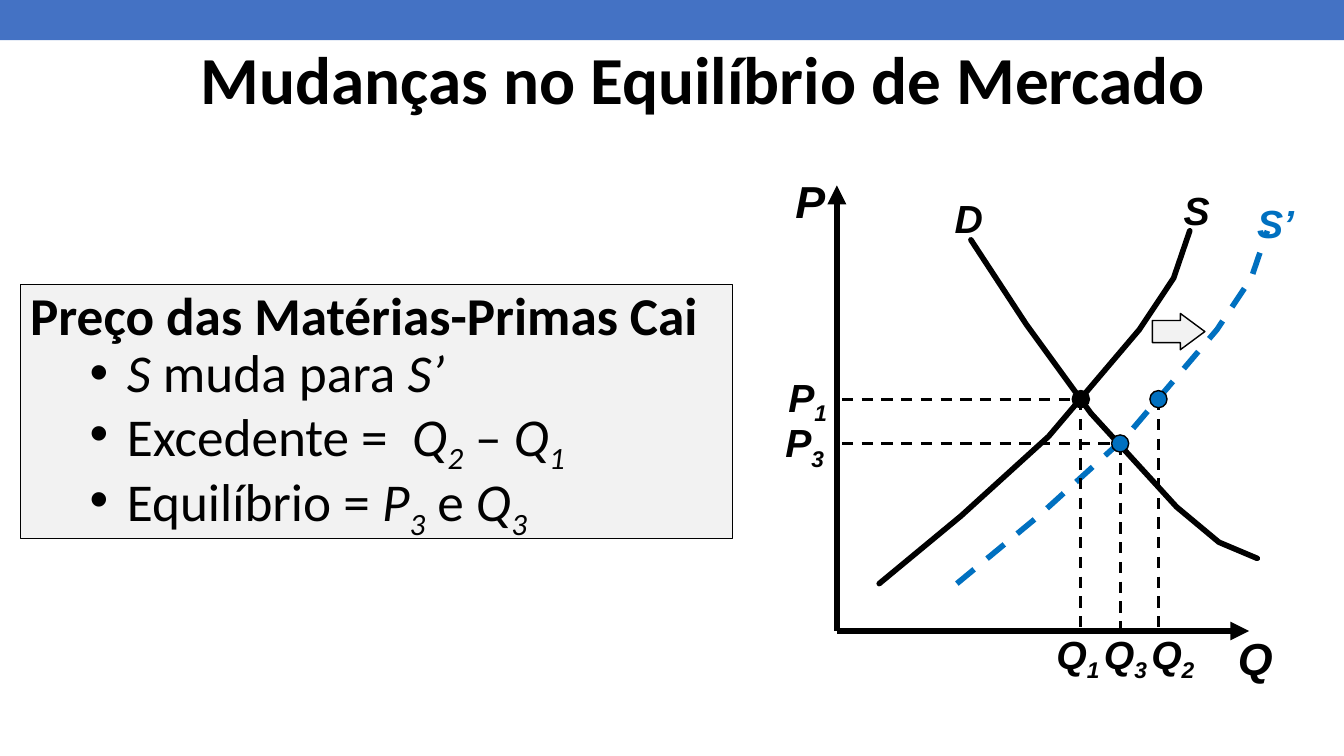
import pptx
import pptx.dml.color
import pptx.enum.dml
import pptx.enum.shapes
import pptx.enum.text
import pptx.oxml.ns
import pptx.util
import lxml.etree

Inches = pptx.util.Inches
Pt = pptx.util.Pt
qn = pptx.oxml.ns.qn
SHAPES = pptx.enum.shapes.MSO_SHAPE
BLACK, BLUE, GREY = "000000", "0070C0", "F2F2F2"


def color(hex_string):
    return pptx.dml.color.RGBColor.from_string(hex_string)


def style_line(line, hex_string, width, dashed=False):
    line.color.rgb = color(hex_string)
    line.width = Pt(width)
    if dashed:
        line.dash_style = pptx.enum.dml.MSO_LINE.DASH


def add_filled(slide, kind, box, fill, outline=None):
    filled = slide.shapes.add_shape(kind, *map(Inches, box))
    filled.shadow.inherit = False
    filled.fill.solid()
    filled.fill.fore_color.rgb = color(fill)
    if outline:
        style_line(filled.line, outline, 1)
    else:
        filled.line.fill.background()
    return filled


def add_line(slide, start, end, width, dashed=False, arrow=False):
    connector = slide.shapes.add_connector(
        pptx.enum.shapes.MSO_CONNECTOR.STRAIGHT, *map(Inches, start + end))
    style_line(connector.line, BLACK, width, dashed)
    properties = connector._element.spPr
    if arrow:
        lxml.etree.SubElement(properties.find(qn("a:ln")), qn("a:tailEnd"), type="triangle")
    lxml.etree.SubElement(properties, qn("a:effectLst"))


def add_curve(slide, points, hex_string, dashed=False):
    corners = [(Inches(x), Inches(y)) for x, y in points]
    builder = slide.shapes.build_freeform(*corners[0])
    builder.add_line_segments(corners[1:], close=False)
    curve = builder.convert_to_shape()
    curve.shadow.inherit = False
    curve.fill.background()
    style_line(curve.line, hex_string, 4, dashed)
    if not dashed:
        curve._element.spPr.find(qn("a:ln")).set("cap", "rnd")


def add_run(paragraph, text, font, size, bold=False, italic=False, subscript=False, hex_string=BLACK):
    run = paragraph.add_run()
    run.text = text
    run.font.name = font
    run.font.size = Pt(size)
    run.font.bold = bold
    run.font.italic = italic
    run.font.color.rgb = color(hex_string)
    if subscript:
        run._r.get_or_add_rPr().set("baseline", "-25000")


def add_label(slide, box, letter, subscript="", size=28, hex_string=BLACK):
    label = slide.shapes.add_textbox(*map(Inches, box))
    label.text_frame.word_wrap = False
    paragraph = label.text_frame.paragraphs[0]
    add_run(paragraph, letter, "Arial", size, True, True, hex_string=hex_string)
    if subscript:
        add_run(paragraph, subscript, "Arial", size, True, True, True, hex_string)


def add_header(slide, left, top, width):
    add_filled(slide, SHAPES.RECTANGLE, (left, top, width, 0.4), "4472C4")
    title = slide.shapes.add_textbox(*map(Inches, (left + 1.4, top + 0.44, 10.66, 0.79)))
    frame = title.text_frame
    frame.word_wrap = True
    frame.vertical_anchor = pptx.enum.text.MSO_ANCHOR.BOTTOM
    paragraph = frame.paragraphs[0]
    paragraph.alignment = pptx.enum.text.PP_ALIGN.RIGHT
    paragraph.line_spacing = 0.9
    add_run(paragraph, "Mudanças no Equilíbrio de Mercado", "Calibri", 48, bold=True)


def add_summary(slide, left, top, width, height):
    summary = slide.shapes.add_textbox(*map(Inches, (left, top, width, height)))
    summary.fill.solid()
    summary.fill.fore_color.rgb = color(GREY)
    style_line(summary.line, BLACK, 0.75)
    frame = summary.text_frame
    frame.word_wrap = True
    heading = frame.paragraphs[0]
    heading.line_spacing = 0.9
    add_run(heading, "Preço das Matérias-Primas Cai", "Calibri", 38, bold=True)

    effects = [
        [("S ", "i"), ("muda para ", ""), ("S’", "i")],
        [("Excedente =  ", ""), ("Q", "i"), ("2", "is"), (" – ", ""), ("Q", "i"), ("1", "is")],
        [("Equilíbrio = ", ""), ("P", "i"), ("3", "is"), (" e ", ""), ("Q", "i"), ("3", "is")],
    ]
    for pieces in effects:
        effect = frame.add_paragraph()
        properties = effect._p.get_or_add_pPr()
        properties.set("marL", str(Inches(0.96)))
        properties.set("indent", str(Inches(-0.37)))
        lxml.etree.SubElement(properties, qn("a:buFont"), typeface="Arial")
        lxml.etree.SubElement(properties, qn("a:buChar"), char="•")
        effect.line_spacing = 0.9
        effect.space_before = Pt(0)
        for text, marks in pieces:
            add_run(effect, text, "Calibri", 38, italic="i" in marks, subscript="s" in marks)


def add_market_chart(slide, left, top):
    def at(x, y):
        return left + x, top + y

    axis_x, axis_y = 0.6, 4.56
    supply = [(1.02, 4.09), (1.83, 3.42), (2.7, 2.63), (3.6, 1.57), (3.94, 1.06), (4.1, 0.59)]
    demand = [(1.93, 0.68), (2.48, 1.52), (3.12, 2.4), (3.97, 3.33), (4.39, 3.68), (4.77, 3.84)]
    shift = 0.77

    add_curve(slide, [at(x + shift, y) for x, y in supply], BLUE, dashed=True)
    shift_arrow = add_filled(slide, SHAPES.RIGHT_ARROW, at(3.73, 1.41) + (0.52, 0.36), GREY, BLACK)
    shift_arrow.adjustments[0] = 0.61
    shift_arrow.adjustments[1] = 0.676
    add_line(slide, at(axis_x, axis_y), at(axis_x, 0.14), 4.5, arrow=True)
    add_line(slide, at(axis_x, axis_y), at(4.69, axis_y), 4.5, arrow=True)
    for curve in (supply, demand):
        add_curve(slide, [at(x, y) for x, y in curve], BLACK)

    market_points = [
        (3.02, 2.26, axis_y, BLACK, True),
        (3.41, 2.7, 4.64, BLUE, True),
        (3.79, 2.26, axis_y, BLUE, False),
    ]
    diameter = 0.17
    for x, y, foot, fill, has_price in market_points:
        add_line(slide, at(x, y), at(x, foot), 2, dashed=True)
        if has_price:
            add_line(slide, at(axis_x + 0.05, y), at(x, y), 2, dashed=True)
    for x, y, foot, fill, has_price in market_points:
        corner = at(x - diameter / 2, y - diameter / 2)
        add_filled(slide, SHAPES.OVAL, corner + (diameter, diameter), fill, BLACK)

    add_label(slide, at(0.09, -0.03) + (0.5, 0.64), "P", size=32)
    add_label(slide, at(4.48, 4.51) + (0.55, 0.64), "Q", size=32)
    add_label(slide, at(1.67, 0.18) + (0.48, 0.57), "D")
    add_label(slide, at(3.94, 0.1) + (0.46, 0.57), "S")
    add_label(slide, at(4.67, 0.23) + (0.57, 0.57), "S’", hex_string=BLUE)
    add_label(slide, at(0.02, 1.95) + (0.61, 0.57), "P", "1")
    add_label(slide, at(-0.01, 2.4) + (0.61, 0.57), "P", "3")
    for column, number in enumerate("132"):
        add_label(slide, at(2.68 + 0.47 * column, 4.5) + (0.65, 0.57), "Q", number)


def main():
    presentation = pptx.Presentation()
    presentation.slide_width = Inches(13.33)
    presentation.slide_height = Inches(7.5)
    slide = presentation.slides.add_slide(presentation.slide_layouts[6])
    add_header(slide, 0, 0, 13.33)
    add_summary(slide, 0.2, 2.82, 7.07, 2.52)
    add_market_chart(slide, 7.7, 1.7)
    presentation.save("out.pptx")


if __name__ == "__main__":
    main()
